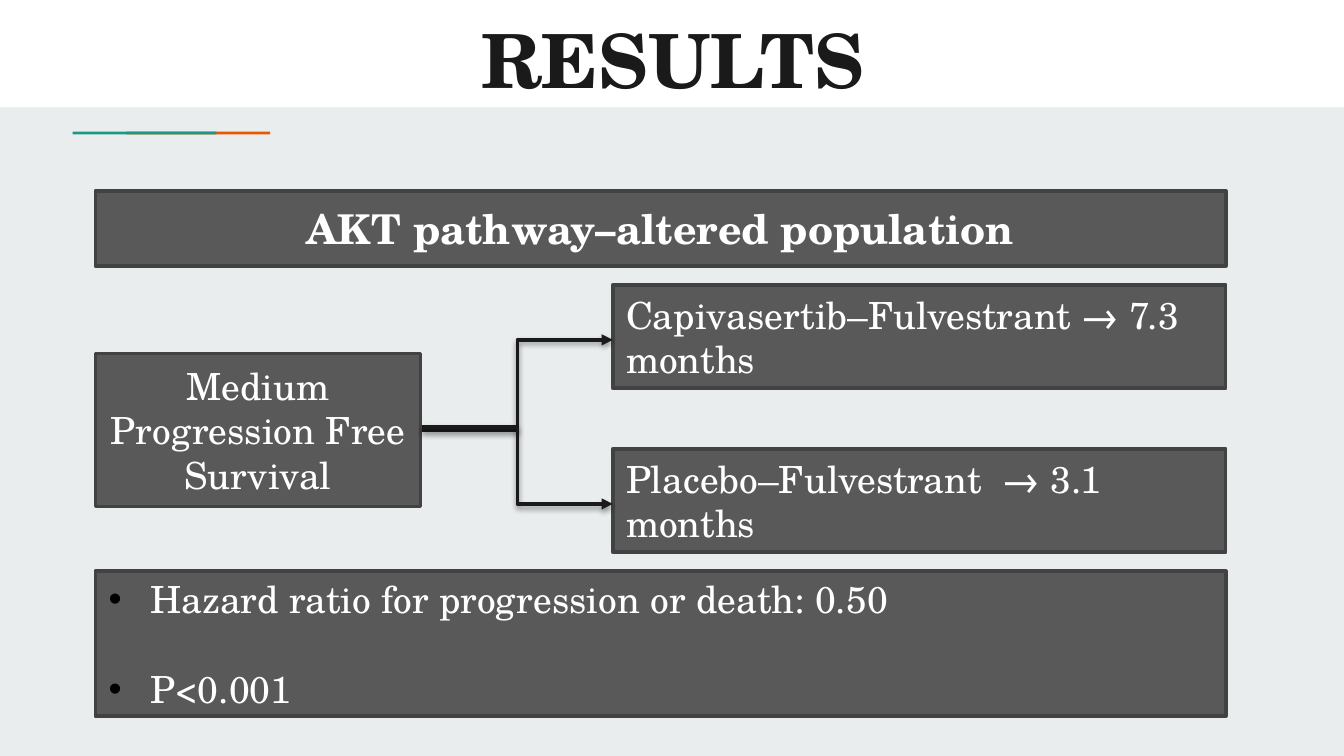
from lxml.etree import SubElement
from pptx import Presentation
from pptx.dml.color import RGBColor
from pptx.enum.shapes import MSO_CONNECTOR, MSO_SHAPE
from pptx.enum.text import MSO_ANCHOR, MSO_AUTO_SIZE, PP_ALIGN
from pptx.oxml.ns import qn
from pptx.util import Inches, Pt

FONT = "TeX Gyre Schola"
INK = "1A1A1A"
WHITE = "FFFFFF"
BOX_FILL = "595959"
BOX_LINE = "424242"
SLIDE_WIDTH = 10
LEFT = 0.71
FULL_WIDTH = 8.41
ARM_LEFT = 4.56
ARM_WIDTH = 4.56
ARM_HEIGHT = 0.77


def color(value):
    """Return the colour for a hex string."""
    return RGBColor.from_string(value)


def add_run(paragraph, text, size=20, ink=WHITE, bold=False):
    """Add one formatted run to a paragraph."""
    run = paragraph.add_run()
    run.text = text
    run.font.name = FONT
    run.font.size = Pt(size)
    run.font.bold = bold
    run.font.color.rgb = color(ink)


def add_bar(slide, left, top, width, height, fill):
    """Add a plain rectangle without an outline."""
    bar = slide.shapes.add_shape(
        MSO_SHAPE.RECTANGLE, Inches(left), Inches(top), Inches(width), Inches(height)
    )
    bar.shadow.inherit = False
    bar.fill.solid()
    bar.fill.fore_color.rgb = color(fill)
    bar.line.fill.background()
    return bar


def add_box(slide, left, top, width, height):
    """Add an outlined dark box and return its text frame."""
    box = add_bar(slide, left, top, width, height, BOX_FILL)
    box.line.color.rgb = color(BOX_LINE)
    box.line.width = Pt(2)
    frame = box.text_frame
    frame.word_wrap = True
    frame.vertical_anchor = MSO_ANCHOR.MIDDLE
    return frame


def add_text_box(slide, left, top, width, height, text, align, size=20, bold=False):
    """Add a dark box that holds one paragraph."""
    paragraph = add_box(slide, left, top, width, height).paragraphs[0]
    paragraph.alignment = align
    add_run(paragraph, text, size, bold=bold)


def add_bullet(paragraph, text):
    """Fill a paragraph as an item with a black bullet."""
    paragraph.alignment = PP_ALIGN.LEFT
    add_run(paragraph, text)
    properties = paragraph._p.get_or_add_pPr()
    properties.set("marL", str(Inches(0.31)))
    properties.set("indent", str(-Inches(0.31)))
    bullet_color = SubElement(properties, qn("a:buClr"))
    SubElement(bullet_color, qn("a:srgbClr"), val="000000")
    SubElement(properties, qn("a:buFont"), typeface="Arial")
    SubElement(properties, qn("a:buChar"), char="•")


def add_bullet_box(slide, left, top, width, height, items):
    """Add a dark box with bullets one line apart."""
    frame = add_box(slide, left, top, width, height)
    for index, item in enumerate(items):
        paragraph = frame.add_paragraph() if index else frame.paragraphs[0]
        if index:
            paragraph.space_before = Pt(24)
        add_bullet(paragraph, item)


def add_bent_arrow(slide, start, end):
    """Add an elbow arrow with a soft shadow below it."""
    arrow = slide.shapes.add_connector(
        MSO_CONNECTOR.ELBOW, *(Inches(value) for value in (*start, *end))
    )
    arrow.line.color.rgb = color(INK)
    arrow.line.width = Pt(2)
    SubElement(arrow.line._get_or_add_ln(), qn("a:tailEnd"), type="triangle")
    effects = SubElement(arrow.element.spPr, qn("a:effectLst"))
    shadow = SubElement(
        effects,
        qn("a:outerShdw"),
        blurRad=str(Pt(3.1)),
        dist=str(Pt(1.6)),
        dir="5400000",
        rotWithShape="0",
    )
    shadow_color = SubElement(shadow, qn("a:srgbClr"), val="000000")
    SubElement(shadow_color, qn("a:alpha"), val="38000")


def add_title(slide, text):
    """Format the title placeholder and put a white band behind it."""
    title = slide.shapes.title
    title.left, title.top = Inches(0.8), Inches(0)
    title.width, title.height = Inches(FULL_WIDTH), Inches(0.9)
    frame = title.text_frame
    frame.auto_size = MSO_AUTO_SIZE.NONE
    frame.word_wrap = True
    frame.vertical_anchor = MSO_ANCHOR.TOP
    frame.margin_left = frame.margin_right = Inches(0.1)
    frame.margin_top = frame.margin_bottom = Inches(0.1)
    frame.paragraphs[0].alignment = PP_ALIGN.CENTER
    add_run(frame.paragraphs[0], text, 40, INK, True)
    band = add_bar(slide, 0, 0, SLIDE_WIDTH, 0.8, WHITE)
    title.element.addprevious(band.element)


def main():
    """Build the results slide and save it."""
    presentation = Presentation()
    presentation.slide_width = Inches(SLIDE_WIDTH)
    presentation.slide_height = Inches(SLIDE_WIDTH * 9 / 16)
    slide = presentation.slides.add_slide(presentation.slide_layouts[5])
    slide.background.fill.solid()
    slide.background.fill.fore_color.rgb = color("E9EDEE")

    add_title(slide, "RESULTS")
    for left, fill in ((0.94, "EB5600"), (0.54, "1A9988")):
        add_bar(slide, left, 0.98, 1.07, 0.02, fill)

    add_text_box(slide, LEFT, 2.63, 2.42, 1.14,
                 "Medium Progression Free Survival", PP_ALIGN.CENTER)
    arms = (
        ("Capivasertib–Fulvestrant → 7.3 months", 2.12, 3.2, 2.53),
        ("Placebo–Fulvestrant  → 3.1 months", 3.34, 3.18, 3.75),
    )
    for text, top, start, end in arms:
        add_text_box(slide, ARM_LEFT, top, ARM_WIDTH, ARM_HEIGHT, text, PP_ALIGN.LEFT)
        add_bent_arrow(slide, (3.14, start), (ARM_LEFT, end))

    add_bullet_box(slide, LEFT, 4.25, FULL_WIDTH, 1.08,
                   ("Hazard ratio for progression or death: 0.50", "P<0.001"))
    add_text_box(slide, LEFT, 1.42, FULL_WIDTH, 0.56,
                 "AKT pathway–altered population", PP_ALIGN.CENTER, 22, True)
    presentation.save("out.pptx")


if __name__ == "__main__":
    main()
